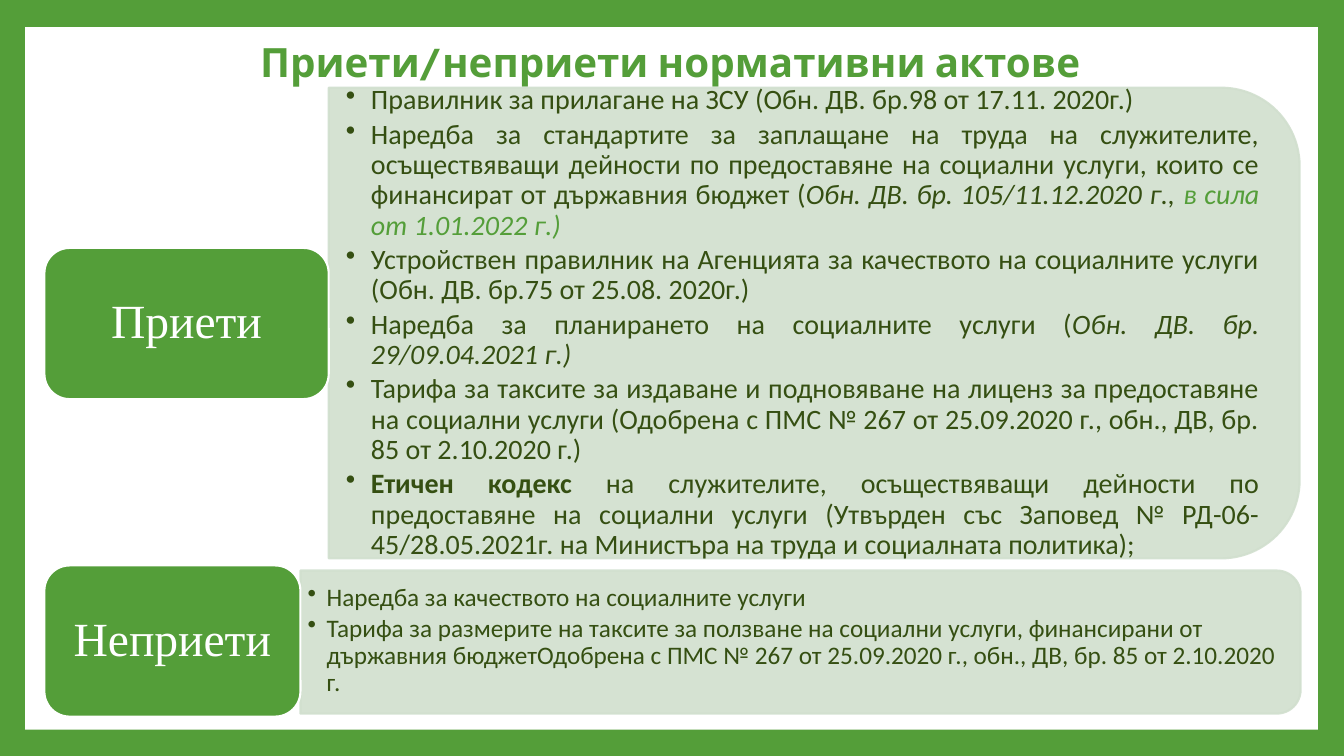
from lxml import etree
from pptx import Presentation
from pptx.dml.color import RGBColor
from pptx.enum.shapes import MSO_SHAPE as SHAPE
from pptx.enum.text import MSO_ANCHOR as ANCHOR, MSO_AUTO_SIZE as AUTO_SIZE, PP_ALIGN as ALIGN
from pptx.oxml.ns import qn
from pptx.util import Inches, Pt

COLORS = {"green": "549E39", "white": "FFFFFF", "panel": "D1DFCE", "text": "354F12"}

# Each run is (text, style), where style may hold "b", "i" and "g" (green)
ADOPTED = [
    [("Правилник за прилагане на ЗСУ (Обн. ДВ. бр.98 от 17.11. 2020г.)", "")],
    [("Наредба за стандартите за заплащане на труда на служителите, осъществяващи дейности "
      "по предоставяне на социални услуги, които се финансират от държавния бюджет (", ""),
     ("Обн. ДВ. бр. 105/11.12.2020 г., ", "i"),
     ("в сила от 1.01.2022 г.)", "ig")],
    [("Устройствен правилник на Агенцията за качеството на социалните услуги "
      "(Обн. ДВ. бр.75 от 25.08. 2020г.)", "")],
    [("Наредба за планирането на социалните услуги (", ""),
     ("Обн. ДВ. бр. 29/09.04.2021 г.)", "i")],
    [("Тарифа за таксите за издаване и подновяване на лиценз за предоставяне на социални "
      "услуги (Одобрена с ПМС № 267 от 25.09.2020 г., обн., ДВ, бр. 85 от 2.10.2020 г.)", "")],
    [("Етичен кодекс ", "b"),
     ("на служителите, осъществяващи дейности по предоставяне на социални услуги (Утвърден "
      "със Заповед № РД-06-45/28.05.2021г. на Министъра на труда и социалната политика);", "")],
]
NOT_ADOPTED = [
    [("Наредба за качеството на социалните услуги", "")],
    [("Тарифа за размерите на таксите за ползване на социални услуги, финансирани от държавния "
      "бюджетОдобрена с ПМС № 267 от 25.09.2020 г., обн., ДВ, бр. 85 от 2.10.2020 г.", "")],
]

# Boxes are (left, top, width, height) in inches
SECTIONS = [
    dict(label="Приети", label_box=(0.44, 2.46, 2.82, 1.5), panel_box=(3.26, 0.87, 9.63, 4.67),
         text_box=(3.26, 1.1, 9.4, 4.21), inset=(0.17, 0.08), indent=0.25, size=20,
         align=ALIGN.JUSTIFY, items=ADOPTED),
    dict(label="Неприети", label_box=(0.44, 5.61, 2.54, 1.5), panel_box=(2.98, 5.66, 9.92, 1.42),
         text_box=(2.98, 5.72, 9.85, 1.28), inset=(0.07, 0.04), indent=0.19, size=18,
         align=ALIGN.LEFT, items=NOT_ADOPTED),
]


def add_block(kind, box, fill, line=None):
    shape = slide.shapes.add_shape(kind, *[Inches(value) for value in box])
    shape.shadow.inherit = False
    shape.fill.solid()
    shape.fill.fore_color.rgb = RGBColor.from_string(COLORS[fill])
    if line:
        shape.line.color.rgb = RGBColor.from_string(COLORS[line])
        shape.line.width = Pt(1.5)
    else:
        shape.line.fill.background()
    return shape


def add_run(paragraph, text, font, size, color, bold=False, italic=False):
    run = paragraph.add_run()
    run.text = text
    run.font.name = font
    run.font.size = Pt(size)
    run.font.bold = bold
    run.font.italic = italic
    run.font.color.rgb = RGBColor.from_string(COLORS[color])


presentation = Presentation()
presentation.slide_width = Inches(13.33)
presentation.slide_height = Inches(7.5)
slide = presentation.slides.add_slide(presentation.slide_layouts[5])

# Green border around a white page
slide.background.fill.solid()
slide.background.fill.fore_color.rgb = RGBColor.from_string(COLORS["green"])
page = add_block(SHAPE.RECTANGLE, (0.25, 0.27, 12.82, 6.97), "white")

# Title, in front of the page
title = slide.shapes.title
title._element.addprevious(page._element)
title.left, title.top = Inches(1.25), Inches(0.4)
title.width, title.height = Inches(10.8), Inches(0.47)
title.text_frame.auto_size = AUTO_SIZE.NONE
title.text_frame.vertical_anchor = ANCHOR.MIDDLE
paragraph = title.text_frame.paragraphs[0]
paragraph.alignment = ALIGN.CENTER
paragraph.line_spacing = 0.9
add_run(paragraph, "Приети/неприети нормативни актове", "Cabin", 28.8, "green", bold=True)

for section in SECTIONS:
    # Panel: a shape with two round top corners, turned to the right
    left, top, width, height = section["panel_box"]
    turned_box = (left + (width - height) / 2, top + (height - width) / 2, height, width)
    panel = add_block(SHAPE.ROUND_2_SAME_RECTANGLE, turned_box, "panel", "panel")
    panel.rotation = 90
    for color in panel._element.spPr.iter(qn("a:srgbClr")):
        etree.SubElement(color, qn("a:alpha"), val="90000")

    # Bulleted list of acts
    frame = slide.shapes.add_textbox(*[Inches(value) for value in section["text_box"]]).text_frame
    frame.word_wrap = True
    frame.vertical_anchor = ANCHOR.MIDDLE
    frame.margin_left = frame.margin_right = Inches(section["inset"][0])
    frame.margin_top = frame.margin_bottom = Inches(section["inset"][1])
    for index, runs in enumerate(section["items"]):
        paragraph = frame.add_paragraph() if index else frame.paragraphs[0]
        paragraph.level = 1
        paragraph.alignment = section["align"]
        paragraph.line_spacing = 0.9
        paragraph.space_after = Pt(section["size"] * 0.15)
        properties = paragraph._p.get_or_add_pPr()
        properties.set("marL", str(Inches(section["indent"])))
        properties.set("indent", str(-Inches(section["indent"])))
        etree.SubElement(properties, qn("a:buChar"), char="•")
        for text, style in runs:
            add_run(paragraph, text, "Calibri", section["size"],
                    "green" if "g" in style else "text", "b" in style, "i" in style)

    # Label to the left of the panel
    label = add_block(SHAPE.ROUNDED_RECTANGLE, section["label_box"], "green", "white")
    label.text_frame.word_wrap = True
    label.text_frame.vertical_anchor = ANCHOR.MIDDLE
    paragraph = label.text_frame.paragraphs[0]
    paragraph.alignment = ALIGN.CENTER
    paragraph.line_spacing = 0.9
    add_run(paragraph, section["label"], "Times New Roman", 34, "white")

presentation.save("out.pptx")
